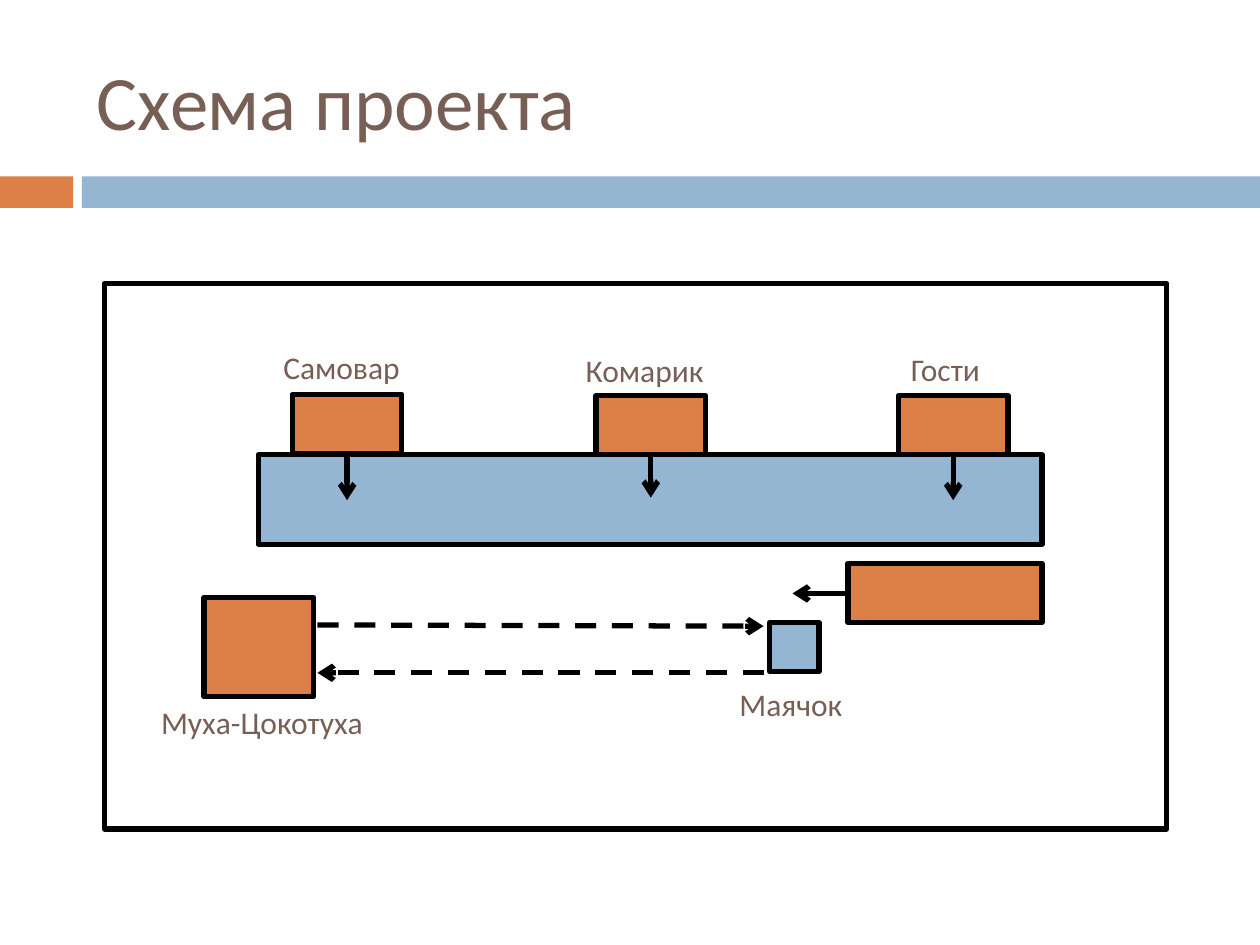
from lxml import etree
from pptx import Presentation
from pptx import util as u
from pptx.dml.color import RGBColor
from pptx.enum import dml, shapes, text
from pptx.oxml import ns

COLORS = {
    "orange": "DD8047",
    "blue": "94B6D2",
    "brown": "775F55",
    "black": "000000",
    "white": "FFFFFF",
}


class SchemeSlide:
    """Holds the style and the current slide."""

    font_name = "Calibri"
    line_width = u.Pt(3)

    def __init__(self, slide):
        self.slide = slide

    def color(self, name):
        return RGBColor.from_string(COLORS[name])

    def outline(self, line):
        line.color.rgb = self.color("black")
        line.width = self.line_width

    def box(self, left, top, width, height, fill, outlined=True):
        shape = self.slide.shapes.add_shape(
            shapes.MSO_SHAPE.RECTANGLE,
            u.Inches(left), u.Inches(top), u.Inches(width), u.Inches(height))
        shape.shadow.inherit = False
        shape.fill.solid()
        shape.fill.fore_color.rgb = self.color(fill)
        if outlined:
            self.outline(shape.line)
        else:
            shape.line.fill.background()

    def arrow(self, start_x, start_y, end_x, end_y, dashed=False):
        connector = self.slide.shapes.add_connector(
            shapes.MSO_CONNECTOR.STRAIGHT,
            u.Inches(start_x), u.Inches(start_y), u.Inches(end_x), u.Inches(end_y))
        self.outline(connector.line)
        if dashed:
            connector.line.dash_style = dml.MSO_LINE.DASH
        # Arrowhead at the end, and no shadow
        properties = connector._element.spPr
        line = properties.find(ns.qn("a:ln"))
        etree.SubElement(line, ns.qn("a:tailEnd")).set("type", "arrow")
        etree.SubElement(properties, ns.qn("a:effectLst"))

    def label(self, words, left, top, width, height=0.4, size=18,
              anchor=text.MSO_ANCHOR.TOP):
        shape = self.slide.shapes.add_textbox(
            u.Inches(left), u.Inches(top), u.Inches(width), u.Inches(height))
        frame = shape.text_frame
        frame.word_wrap = True
        frame.vertical_anchor = anchor
        frame.text = words
        font = frame.paragraphs[0].runs[0].font
        font.name = self.font_name
        font.size = u.Pt(size)
        font.color.rgb = self.color("brown")


def main():
    presentation = Presentation()
    presentation.slide_width = u.Inches(10)
    presentation.slide_height = u.Inches(7.5)
    scheme = SchemeSlide(presentation.slides.add_slide(presentation.slide_layouts[6]))

    # Header band and title
    scheme.box(0, 1.4, 0.58, 0.25, "orange", outlined=False)
    scheme.box(0.65, 1.4, 9.35, 0.25, "blue", outlined=False)
    scheme.label("Схема проекта", 0.67, 0.25, 8.92, 1.08, size=44,
                 anchor=text.MSO_ANCHOR.MIDDLE)

    # Stage frame and table
    scheme.box(0.83, 2.25, 8.43, 4.33, "white")
    scheme.box(2.05, 3.61, 6.22, 0.71, "blue")

    # Characters at the table: box left and top, arrow start, label place
    box_width, arrow_length = 0.87, 0.36
    characters = [
        ("Самовар", 2.32, 3.13, 3.61, 2.15, 2.71, 2.6),
        ("Комарик", 4.73, 3.14, 3.59, 4.55, 2.74, 1.28),
        ("Гости", 7.13, 3.14, 3.61, 7.13, 2.73, 1.28),
    ]
    for name, left, top, arrow_top, label_left, label_top, label_width in characters:
        center = left + box_width / 2
        scheme.box(left, top, box_width, 0.47, "orange")
        scheme.arrow(center, arrow_top, center, arrow_top + arrow_length)
        scheme.label(name, label_left, label_top, label_width)

    # Fly, beacon and the moving block
    scheme.box(1.62, 4.74, box_width, 0.79, "orange")
    scheme.label("Муха-Цокотуха", 1.18, 5.53, 2.6)
    scheme.box(6.73, 4.47, 1.54, 0.47, "orange")
    scheme.arrow(6.71, 4.71, 6.29, 4.71)
    scheme.box(6.11, 4.94, 0.39, 0.39, "blue")
    scheme.label("Маячок", 5.77, 5.39, 2.6)

    # Path to the beacon and back
    scheme.arrow(2.52, 4.96, 6.06, 4.97, dashed=True)
    scheme.arrow(6.06, 5.34, 2.52, 5.34, dashed=True)

    presentation.save("out.pptx")


if __name__ == "__main__":
    main()
